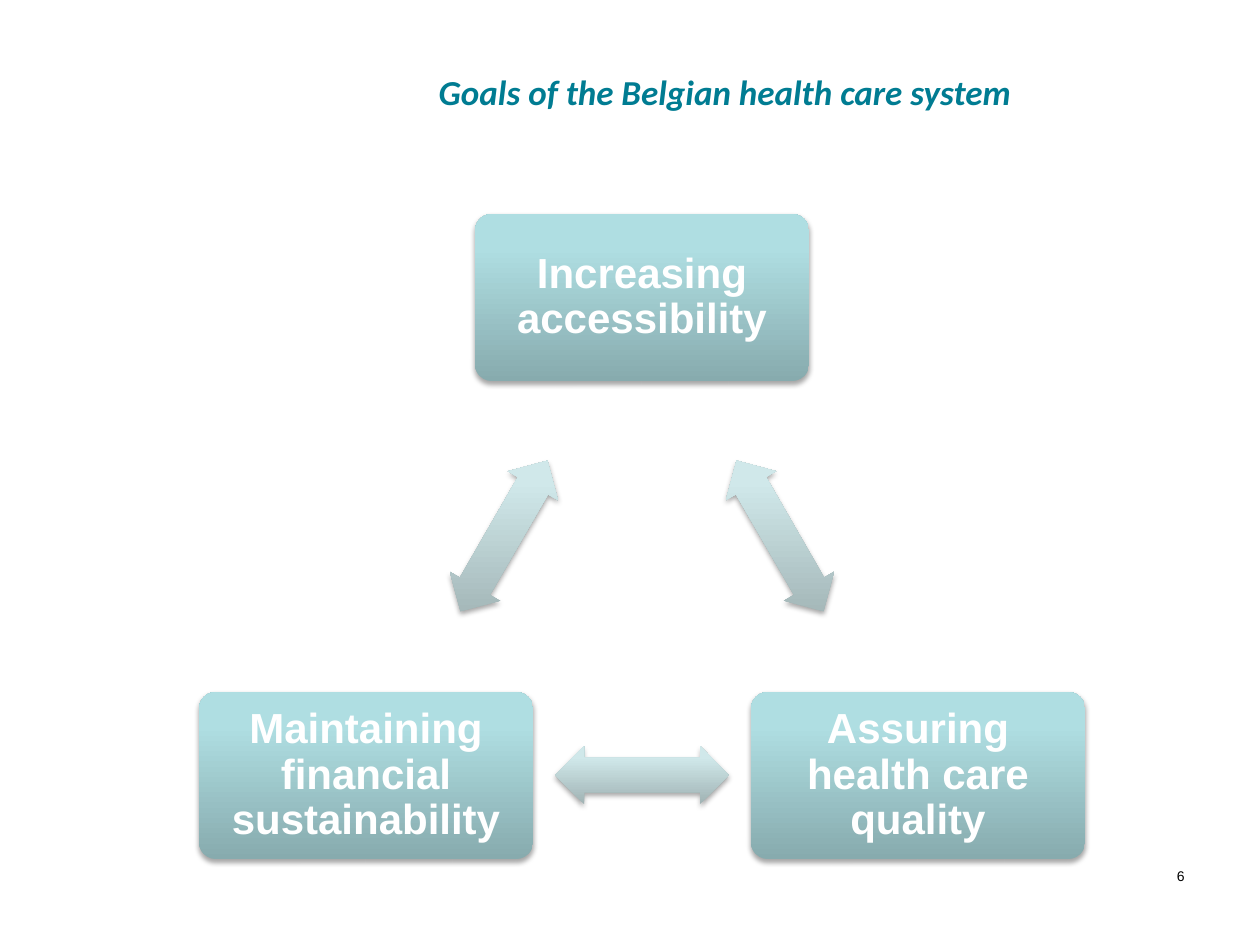
from dataclasses import dataclass
from math import cos, radians, sin, sqrt

from lxml.etree import SubElement
from pptx import Presentation
from pptx.dml.color import RGBColor
from pptx.enum.shapes import MSO_SHAPE
from pptx.enum.text import MSO_ANCHOR, PP_ALIGN
from pptx.oxml import parse_xml
from pptx.oxml.ns import nsdecls, qn
from pptx.util import Emu, Pt

PX = 914400 / 126


@dataclass(frozen=True)
class Theme:
    title: str = "007C92"
    box_text: str = "FFFFFF"
    number: str = "000000"
    shadow: str = "000000"
    box_stops: tuple = ((0, "87ABAE"), (80, "AFDEE2"), (100, "AFE0E4"))
    arrow_stops: tuple = ((0, "A0B3B4"), (80, "D0E8EA"), (100, "D0EAEC"))
    title_size: int = 20
    box_size: int = 24
    number_size: int = 8
    title_font: str = "Calibri"
    body_font: str = "Arial"


@dataclass(frozen=True)
class Goal:
    text: str
    angle: int  # direction from the triangle's centre, clockwise from east


THEME = Theme()
GOALS = (
    Goal("Increasing accessibility", -90),
    Goal("Assuring health care quality", 30),
    Goal("Maintaining financial sustainability", 150),
)

# Equilateral triangle of goals
CENTER_X, CENTER_Y, SIDE = 642, 616, 552
BOX_W, BOX_H = 334, 167
ARROW_W, ARROW_H = 174, 58


def px(n: int) -> Emu:
    return Emu(round(n * PX))


def write(s, text: str, *, size: int, color: str, font: str, align=PP_ALIGN.CENTER,
          anchor=MSO_ANCHOR.MIDDLE, bold=False, italic=False, spacing=1.0, inset=None) -> None:
    tf = s.text_frame
    tf.word_wrap = True
    tf.vertical_anchor = anchor
    if inset is not None:
        tf.margin_left = tf.margin_right = tf.margin_top = tf.margin_bottom = px(inset)
    p = tf.paragraphs[0]
    p.alignment = align
    p.line_spacing = spacing
    r = p.add_run()
    r.text = text
    r.font.size, r.font.name = Pt(size), font
    r.font.bold, r.font.italic = bold, italic
    r.font.color.rgb = RGBColor.from_string(color)


def shade(s, stops: tuple) -> None:
    """Bottom-to-top gradient that stays upright, with a soft shadow below."""
    s.line.fill.background()
    ln = s._element.spPr.find(qn("a:ln"))
    grad = parse_xml(f'<a:gradFill {nsdecls("a")} rotWithShape="0"><a:gsLst/>'
                     '<a:lin ang="16200000" scaled="0"/></a:gradFill>')
    for pos, color in stops:
        gs = SubElement(grad[0], qn("a:gs"), pos=str(pos * 1000))
        SubElement(gs, qn("a:srgbClr"), val=color)
    ln.addprevious(grad)
    ln.addnext(parse_xml(
        f'<a:effectLst {nsdecls("a")}><a:outerShdw blurRad="{Pt(3.1)}" dist="{Pt(1.8)}" '
        f'dir="5400000" rotWithShape="0"><a:srgbClr val="{THEME.shadow}">'
        '<a:alpha val="35000"/></a:srgbClr></a:outerShdw></a:effectLst>'))


def add_centered(slide, kind, cx: int, cy: int, w: int, h: int, stops: tuple):
    s = slide.shapes.add_shape(kind, px(cx - w // 2), px(cy - h // 2), px(w), px(h))
    shade(s, stops)
    return s


def add_box(slide, goal: Goal, cx: int, cy: int) -> None:
    s = add_centered(slide, MSO_SHAPE.ROUNDED_RECTANGLE, cx, cy, BOX_W, BOX_H, THEME.box_stops)
    s.adjustments[0] = 0.1
    write(s, goal.text, size=THEME.box_size, color=THEME.box_text, font=THEME.body_font,
          bold=True, spacing=0.9, inset=13)


def add_arrow(slide, cx: int, cy: int, rotation: int) -> None:
    s = add_centered(slide, MSO_SHAPE.LEFT_RIGHT_ARROW, cx, cy, ARROW_W, ARROW_H,
                     THEME.arrow_stops)
    s.adjustments[0], s.adjustments[1] = 0.6, 0.5
    s.rotation = rotation


def around_center(radius: float, angle: int) -> tuple[int, int]:
    a = radians(angle)
    return round(CENTER_X + radius * cos(a)), round(CENTER_Y + radius * sin(a))


def main() -> None:
    prs = Presentation()
    prs.slide_width, prs.slide_height = px(1260), px(945)
    slide = prs.slides.add_slide(prs.slide_layouts[6])

    # Goals at the corners, arrows at the middle of the sides
    radius = SIDE / sqrt(3)
    for goal in GOALS:
        add_box(slide, goal, *around_center(radius, goal.angle))
        side_angle = goal.angle + 60
        add_arrow(slide, *around_center(radius / 2, side_angle), side_angle + 90)

    # Slide number
    sp = slide.shapes.add_textbox(px(903), px(861), px(294), px(66))
    write(sp, "6", size=THEME.number_size, color=THEME.number, font=THEME.body_font,
          align=PP_ALIGN.RIGHT, anchor=MSO_ANCHOR.TOP)

    # Title
    sp = slide.shapes.add_textbox(px(253), px(38), px(944), px(107))
    write(sp, "Goals of the Belgian health care system", size=THEME.title_size,
          color=THEME.title, font=THEME.title_font, bold=True, italic=True)

    prs.save("out.pptx")


if __name__ == "__main__":
    main()
